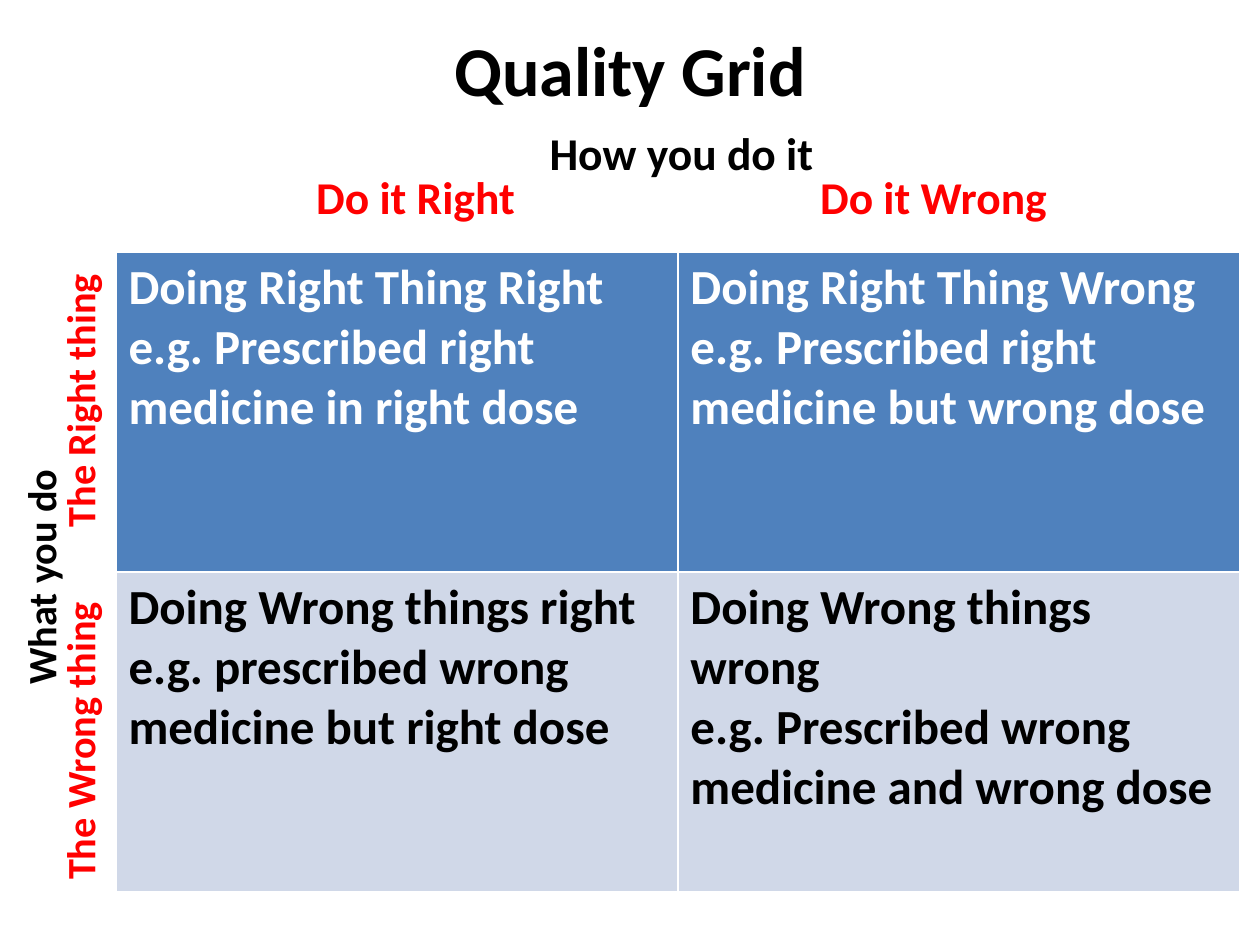
import dataclasses

import pptx
import pptx.dml.color
import pptx.enum.text
import pptx.util

Inches = pptx.util.Inches


@dataclasses.dataclass(frozen=True)
class Theme:
    font: str = "Calibri"
    ink: str = "000000"
    accent: str = "FF0000"
    light: str = "FFFFFF"
    right_fill: str = "4F81BD"
    wrong_fill: str = "D0D8E8"
    title_size: float = 40
    cell_size: float = 28
    across_size: float = 26
    down_size: float = 23


THEME = Theme()

# Text, centre x, centre y, colour
ACROSS_LABELS = [
    ("How you do it", 5.41, 1.21, THEME.ink),
    ("Do it Right", 3.3, 1.56, THEME.accent),
    ("Do it Wrong", 7.41, 1.56, THEME.accent),
]
DOWN_LABELS = [
    ("What you do", 0.32, 4.58, THEME.ink),
    ("The Right thing", 0.63, 3.18, THEME.accent),
    ("The Wrong thing", 0.63, 5.88, THEME.accent),
]
# Fill, text colour, cells of the row
GRID_ROWS = [
    (THEME.right_fill, THEME.light, [
        ["Doing Right Thing Right",
         "e.g. Prescribed right medicine in right dose"],
        ["Doing Right Thing Wrong",
         "e.g. Prescribed right medicine but wrong dose"],
    ]),
    (THEME.wrong_fill, THEME.ink, [
        ["Doing Wrong things right",
         "e.g. prescribed wrong medicine but right dose"],
        ["Doing Wrong things wrong",
         "e.g. Prescribed wrong medicine and wrong dose"],
    ]),
]


def rgb(value):
    return pptx.dml.color.RGBColor.from_string(value)


def write_lines(frame, lines, size, color, align):
    """Fill a text frame with one bold paragraph per line."""
    font_format = {"name": THEME.font, "size": pptx.util.Pt(size), "bold": True}
    for index, line in enumerate(lines):
        para = frame.paragraphs[0] if index == 0 else frame.add_paragraph()
        para.alignment = align
        span = para.add_run()
        span.text = line
        for name, value in font_format.items():
            setattr(span.font, name, value)
        span.font.color.rgb = rgb(color)


def add_label(page, text, center_x, center_y, width, height, size, color,
              rotation=0):
    box = page.shapes.add_textbox(
        Inches(center_x - width / 2), Inches(center_y - height / 2),
        Inches(width), Inches(height))
    box.rotation = rotation
    frame = box.text_frame
    frame.word_wrap = True
    frame.vertical_anchor = pptx.enum.text.MSO_ANCHOR.MIDDLE
    write_lines(frame, [text], size, color, pptx.enum.text.PP_ALIGN.CENTER)


def add_grid(page):
    table = page.shapes.add_table(
        2, 2, Inches(0.92), Inches(2), Inches(8.92), Inches(5.08)).table
    for row, (fill, color, cells) in enumerate(GRID_ROWS):
        for column, lines in enumerate(cells):
            cell = table.cell(row, column)
            cell.fill.solid()
            cell.fill.fore_color.rgb = rgb(fill)
            write_lines(cell.text_frame, lines, THEME.cell_size, color,
                        pptx.enum.text.PP_ALIGN.LEFT)


def main():
    deck = pptx.Presentation()
    deck.slide_width, deck.slide_height = Inches(10), Inches(7.5)
    page = deck.slides.add_slide(deck.slide_layouts[6])
    add_label(page, "Quality Grid", 5, 0.54, 9, 0.58,
              THEME.title_size, THEME.ink)
    add_grid(page)
    for text, x, y, color in ACROSS_LABELS:
        add_label(page, text, x, y, 3, 0.5, THEME.across_size, color)
    for text, x, y, color in DOWN_LABELS:
        add_label(page, text, x, y, 2.6, 0.5, THEME.down_size, color,
                  rotation=270)
    deck.save("out.pptx")


if __name__ == "__main__":
    main()
